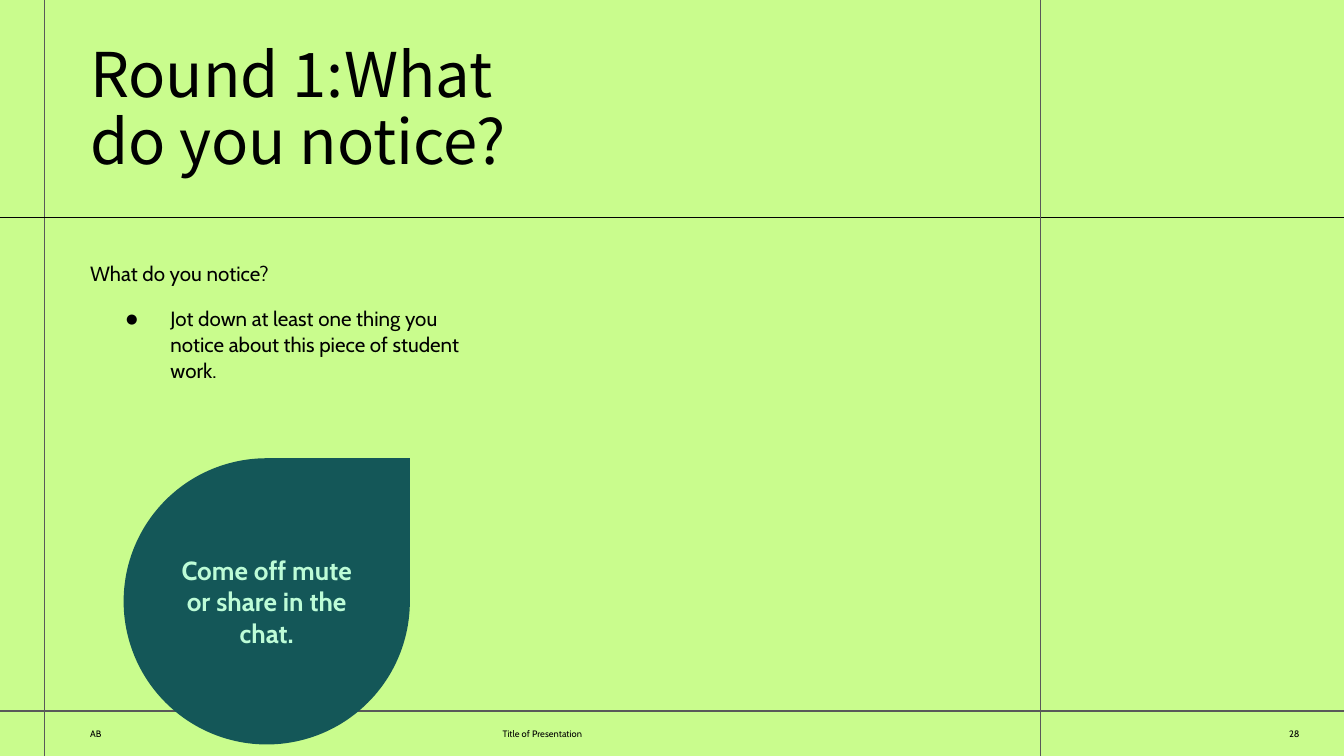
from lxml import etree
from pptx import Presentation
from pptx import util as u
from pptx.dml import color
from pptx.enum import shapes, text
from pptx.oxml import ns

WIDTH = 10
HEIGHT = WIDTH * 9 / 16
BLACK, GRAY, LIME, TEAL, MINT = "000000", "595959", "C9FC8D", "145758", "BDFCD7"
BODY_FONT, TITLE_FONT = "Cabin", "Noto Sans CJK KR"
LEFT, FOOTER_TOP, FOOTER_HEIGHT = 0.67, 5.29, 0.34

TITLE = "Round 1:What \ndo you notice?"
QUESTION = "What do you notice?"
TASK = "Jot down at least one thing you notice about this piece of student work."
CALLOUT = "Come off mute or share in the chat."
FOOTERS = [  # text, left, width, alignment
    ("28", 6.74, 2.93, text.PP_ALIGN.RIGHT),
    ("Title of Presentation", 3.74, 2.9, text.PP_ALIGN.LEFT),
    ("AB", LEFT, 2.93, text.PP_ALIGN.LEFT),
]
FOOTER_RULES = [  # start, end, colour
    ((0, FOOTER_TOP), (WIDTH, FOOTER_TOP), GRAY),
    ((0.33, HEIGHT), (0.33, 0), GRAY),
]
BODY_RULES = [
    ((0, 1.62), (WIDTH, 1.62), BLACK),
    ((7.74, 0), (7.74, HEIGHT), GRAY),
]


def rgb(value):
    return color.RGBColor.from_string(value)


def add_rule(slide, start, end, ink):
    line = slide.shapes.add_connector(
        shapes.MSO_CONNECTOR.STRAIGHT, *(u.Inches(n) for n in start + end))
    line.line.color.rgb = rgb(ink)
    line.line.width = u.Pt(0.75)
    etree.SubElement(line._element.spPr, ns.qn("a:effectLst"))


def write(shape, words, size, font=BODY_FONT, ink=BLACK, bold=False, spacing=None,
          before=None, align=text.PP_ALIGN.LEFT, anchor=text.MSO_ANCHOR.TOP,
          insets=(0, 0, 0, 0), grow=False):
    """Put one formatted paragraph in the shape and return it."""
    frame = shape.text_frame
    frame.word_wrap = True
    frame.vertical_anchor = anchor
    (frame.margin_left, frame.margin_top,
     frame.margin_right, frame.margin_bottom) = (u.Inches(n) for n in insets)
    if grow:
        frame.auto_size = text.MSO_AUTO_SIZE.SHAPE_TO_FIT_TEXT
    para = frame.paragraphs[0]
    para.text = words
    para.alignment = align
    para.line_spacing = spacing
    para.space_before = before
    for span in para.runs:
        span.font.name = font
        span.font.size = u.Pt(size)
        span.font.bold = bold
        span.font.color.rgb = rgb(ink)
    return para


def add_text(slide, place, words, size, **style):
    box = slide.shapes.add_textbox(*(u.Inches(n) for n in place))
    return write(box, words, size, **style)


def add_bullet(para, indent, hanging):
    props = para._p.get_or_add_pPr()
    props.set("marL", str(u.Inches(indent)))
    props.set("indent", str(-u.Inches(hanging)))
    ink = etree.SubElement(props, ns.qn("a:buClr"))
    etree.SubElement(ink, ns.qn("a:srgbClr"), val=BLACK)
    etree.SubElement(props, ns.qn("a:buSzPct"), val="65000")
    etree.SubElement(props, ns.qn("a:buFont"), typeface=BODY_FONT)
    etree.SubElement(props, ns.qn("a:buChar"), char="●")


def main():
    deck = Presentation()
    deck.slide_width, deck.slide_height = u.Inches(WIDTH), u.Inches(HEIGHT)
    slide = deck.slides.add_slide(deck.slide_layouts[6])
    slide.background.fill.solid()
    slide.background.fill.fore_color.rgb = rgb(LIME)

    for rule in FOOTER_RULES:
        add_rule(slide, *rule)
    for words, left, width, align in FOOTERS:
        add_text(slide, (left, FOOTER_TOP, width, FOOTER_HEIGHT), words, 5,
                 align=align, anchor=text.MSO_ANCHOR.MIDDLE)

    task = add_text(slide, (LEFT, 2.27, 2.86, 0.57), TASK, 11, spacing=1.05,
                    before=u.Pt(12), insets=(0.1, 0, 0, 0), grow=True)
    add_bullet(task, 0.5, 0.33)
    add_text(slide, (LEFT, 1.93, 2.86, 0.19), QUESTION, 11, spacing=1.05, grow=True)
    for rule in BODY_RULES:
        add_rule(slide, *rule)
    add_text(slide, (LEFT, 0.33, 5.96, 1), TITLE, 33, font=TITLE_FONT,
             spacing=0.9, grow=True)

    drop = slide.shapes.add_shape(
        shapes.MSO_SHAPE.TEAR, *(u.Inches(n) for n in (0.92, 3.41, 2.13, 2.13)))
    drop.shadow.inherit = False
    drop.fill.solid()
    drop.fill.fore_color.rgb = rgb(TEAL)
    drop.line.fill.background()
    write(drop, CALLOUT, 14, ink=MINT, bold=True, align=text.PP_ALIGN.CENTER,
          anchor=text.MSO_ANCHOR.MIDDLE, insets=(0.1, 0.1, 0.1, 0.1))

    deck.save("out.pptx")


if __name__ == "__main__":
    main()
